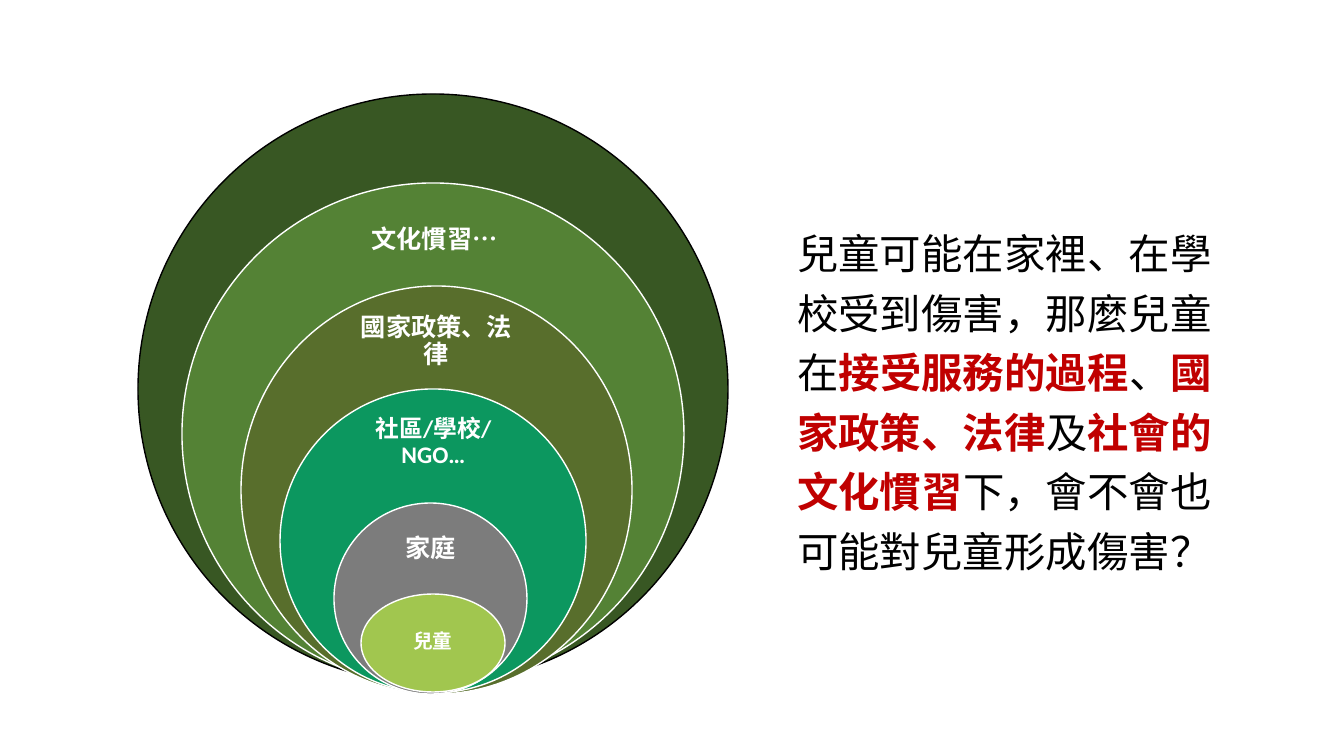
from lxml import etree
from pptx import Presentation
from pptx.dml.color import RGBColor
from pptx.enum.shapes import MSO_SHAPE
from pptx.enum.text import MSO_ANCHOR, MSO_AUTO_SIZE, PP_ALIGN
from pptx.oxml.ns import qn
from pptx.util import Emu, Pt

OVAL = MSO_SHAPE.OVAL
MIDDLE, BOTTOM = MSO_ANCHOR.MIDDLE, MSO_ANCHOR.BOTTOM
CENTER, LEFT = PP_ALIGN.CENTER, PP_ALIGN.LEFT
NO_FIT = MSO_AUTO_SIZE.NONE
THEME = {
    "white": "FFFFFF", "black": "000000", "emphasis": "C00000",
    "society": "385723", "culture": "548235", "policy": "586E2C",
    "community": "0C975F", "family": "7C7C7C", "child": "A1C64F",
    "latin": "Calibri", "chinese": "Noto Sans CJK TC",
    "label": 18, "long label": 17, "small label": 14, "body": 29.6,
}


def px(value):
    return Emu(round(value * 914400 / 100.8))


def add_run(paragraph, text, size, color, bold, latin):
    run = paragraph.add_run()
    run.text = text
    font = run.font
    font.size = Pt(THEME[size])
    font.bold = bold
    font.name = THEME[latin]
    font.color.rgb = RGBColor.from_string(THEME[color])
    properties = run._r.get_or_add_rPr()
    east_asian = etree.SubElement(properties, qn("a:ea"))
    east_asian.set("typeface", THEME["chinese"])


presentation = Presentation()
presentation.slide_width = px(1344)
presentation.slide_height = px(756)
slide = presentation.slides.add_slide(presentation.slide_layouts[1])
title = slide.shapes.title
title.element.getparent().remove(title.element)

rings = [
    ("society", "black", (138, 94, 590, 590), None),
    ("culture", "white", (182, 183, 502, 502),
     ("文化慣習…", "label", (326, 212, 217, 57), 14)),
    ("policy", "white", (241, 286, 391, 408),
     ("國家政策、法律", "label", (335, 314, 203, 56), 14)),
    ("community", "white", (280, 389, 306, 304),
     ("社區/學校/NGO…", "long label", (351, 416, 165, 54), 13)),
    ("family", "white", (334, 503, 193, 191),
     ("家庭", "label", (368, 526, 125, 47), 14)),
    ("child", "white", (361, 594, 144, 98),
     ("兒童", "small label", (382, 618, 102, 48), 11)),
]
for fill, outline, box, label in rings:
    ring = slide.shapes.add_shape(OVAL, *map(px, box))
    ring.shadow.inherit = False
    ring.fill.solid()
    ring.fill.fore_color.rgb = RGBColor.from_string(THEME[fill])
    ring.line.color.rgb = RGBColor.from_string(THEME[outline])
    ring.line.width = Pt(1)
    if label:
        text, size, label_box, inset = label
        frame = slide.shapes.add_textbox(*map(px, label_box)).text_frame
        frame.word_wrap = True
        frame.vertical_anchor = MIDDLE
        frame.margin_left = frame.margin_right = px(inset)
        frame.margin_top = frame.margin_bottom = px(inset)
        paragraph = frame.paragraphs[0]
        paragraph.alignment = CENTER
        paragraph.line_spacing = 0.9
        add_run(paragraph, text, size, "white", True, "latin")

question = slide.placeholders[1]
question.left, question.top, question.width, question.height = map(px, (787, 177, 464, 404))
frame = question.text_frame
frame.word_wrap = True
frame.auto_size = NO_FIT
frame.vertical_anchor = BOTTOM
paragraph = frame.paragraphs[0]
paragraph.alignment = LEFT
paragraph.line_spacing = 1.2
paragraph.space_before = paragraph.space_after = Pt(12)
properties = paragraph._p.get_or_add_pPr()
properties.set("marL", "0")
properties.set("indent", "0")
etree.SubElement(properties, qn("a:buNone"))
for text, emphasized in [
    ("兒童可能在家裡、在學校受到傷害，那麼兒童在", False),
    ("接受服務的過程", True),
    ("、", False),
    ("國家政策、法律", True),
    ("及", False),
    ("社會的文化慣習", True),
    ("下，會不會也可能對兒童形成傷害？", False),
]:
    color = "emphasis" if emphasized else "black"
    add_run(paragraph, text, "body", color, emphasized, "chinese")

presentation.save("out.pptx")
